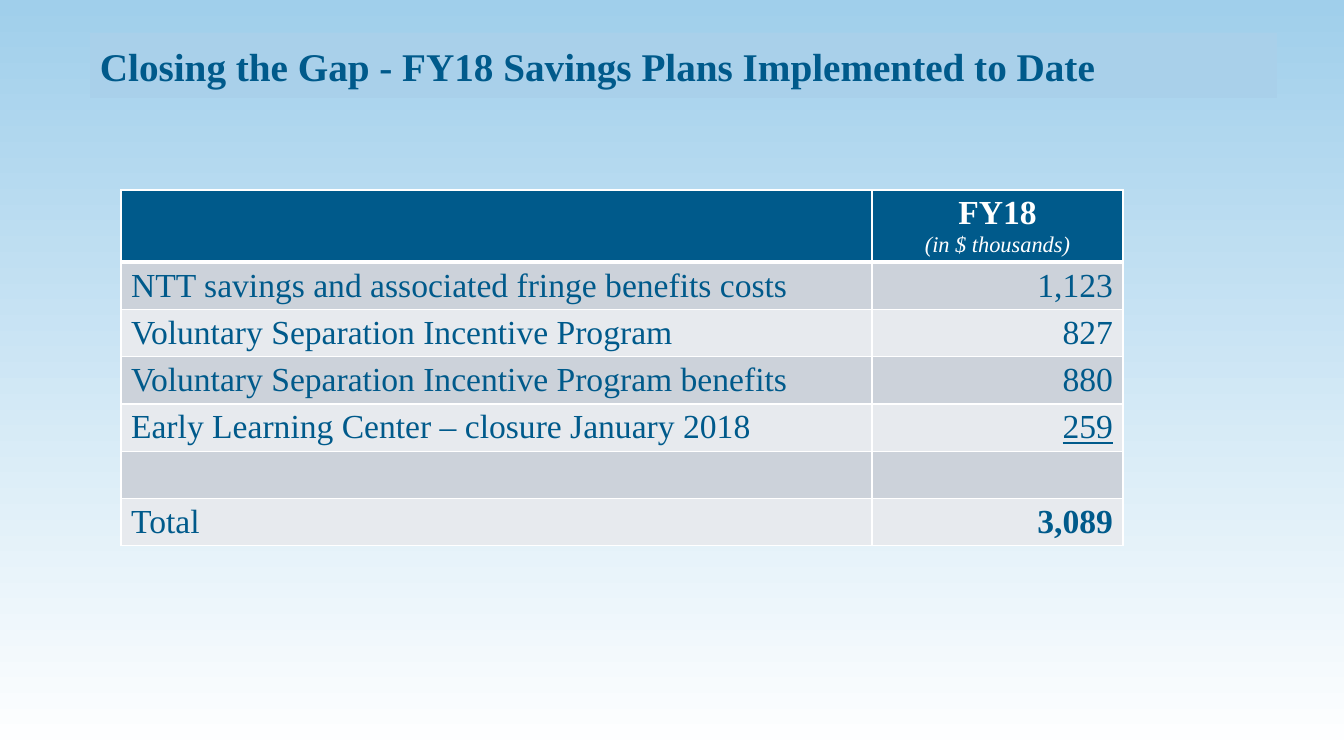
from lxml import etree
from pptx import Presentation
from pptx.dml.color import RGBColor
from pptx.enum import shapes, text
from pptx.oxml.ns import qn
from pptx.util import Pt

# Content
TITLE = "Closing the Gap - FY18 Savings Plans Implemented to Date"
HEAD = ("FY18", "(in $ thousands)")
ROWS = [
    ("NTT savings and associated fringe benefits costs", "1,123", {}),
    ("Voluntary Separation Incentive Program", "827", {}),
    ("Voluntary Separation Incentive Program benefits", "880", {}),
    ("Early Learning Center – closure January 2018", "259", {"line": True}),
    ("", "", {}),
    ("Total", "3,089", {"bold": True}),
]

# Look
FONT = "Times New Roman"
NAVY = RGBColor(0x00, 0x5A, 0x8B)
SKY = RGBColor(0xA0, 0xCF, 0xEB)
BAND = RGBColor(0xA9, 0xD0, 0xEA)
WHITE = RGBColor(0xFF, 0xFF, 0xFF)
GREYS = (RGBColor(0xCC, 0xD2, 0xDA), RGBColor(0xE7, 0xEA, 0xEE))
LEFT, RIGHT, MID = text.PP_ALIGN.LEFT, text.PP_ALIGN.RIGHT, text.PP_ALIGN.CENTER

# Sizes in px
WIDE, HIGH = 1344, 756
COLS = (751, 251)
HEAD_H, ROW_H = 72, 47


def px(n):
    return round(n * 914400 / 100.8)


def write(para, words, size=24, color=NAVY, bold=False, slant=False,
          line=False, align=LEFT):
    para.alignment = align
    part = para.add_run() if words else para
    if words:
        part.text = words
    font = part.font
    font.name, font.size, font.color.rgb = FONT, Pt(size), color
    font.bold, font.italic, font.underline = bold, slant, line


def style(cell, fill, top=1, bottom=1):
    """Draw white borders, then the fill."""
    props = cell._tc.get_or_add_tcPr()
    for side, width in zip("LRTB", (1, 1, top, bottom)):
        edge = etree.SubElement(props, qn(f"a:ln{side}"), w=str(Pt(width)))
        paint = etree.SubElement(edge, qn("a:solidFill"))
        etree.SubElement(paint, qn("a:srgbClr"), val=str(WHITE))
    cell.fill.solid()
    cell.fill.fore_color.rgb = fill


deck = Presentation()
deck.slide_width, deck.slide_height = px(WIDE), px(HIGH)
slide = deck.slides.add_slide(deck.slide_layouts[6])

# Background
back = slide.background.fill
back.gradient()
back.gradient_angle = 270
for stop, color, place in zip(back.gradient_stops, (SKY, WHITE), (0, 1)):
    stop.color.rgb, stop.position = color, place

# Title
title = slide.shapes.add_shape(shapes.MSO_SHAPE.RECTANGLE,
                               px(90), px(33), px(1187), px(65))
title.shadow.inherit = False
title.fill.solid()
title.fill.fore_color.rgb = BAND
title.line.fill.background()
title.text_frame.word_wrap = True
title.text_frame.vertical_anchor = text.MSO_ANCHOR.MIDDLE
write(title.text_frame.paragraphs[0], TITLE, size=28, bold=True)

# Savings table
table = slide.shapes.add_table(
    len(ROWS) + 1, len(COLS), px(121), px(190), px(sum(COLS)),
    px(HEAD_H + ROW_H * len(ROWS))).table
for col, width in zip(table.columns, COLS):
    col.width = px(width)
for i, row in enumerate(table.rows):
    row.height = px(ROW_H if i else HEAD_H)

# Header row
for cell in table.rows[0].cells:
    style(cell, NAVY, bottom=3)
frame = table.cell(0, 1).text_frame
write(frame.paragraphs[0], HEAD[0], color=WHITE, bold=True, align=MID)
write(frame.add_paragraph(), HEAD[1], size=16, color=WHITE, slant=True, align=MID)

# Body rows
for i, (label, value, look) in enumerate(ROWS):
    name, sum_cell = table.rows[i + 1].cells
    for cell in (name, sum_cell):
        style(cell, GREYS[i % 2], top=1 if i else 3)
    write(name.text_frame.paragraphs[0], label)
    write(sum_cell.text_frame.paragraphs[0], value, align=RIGHT, **look)

deck.save("out.pptx")
